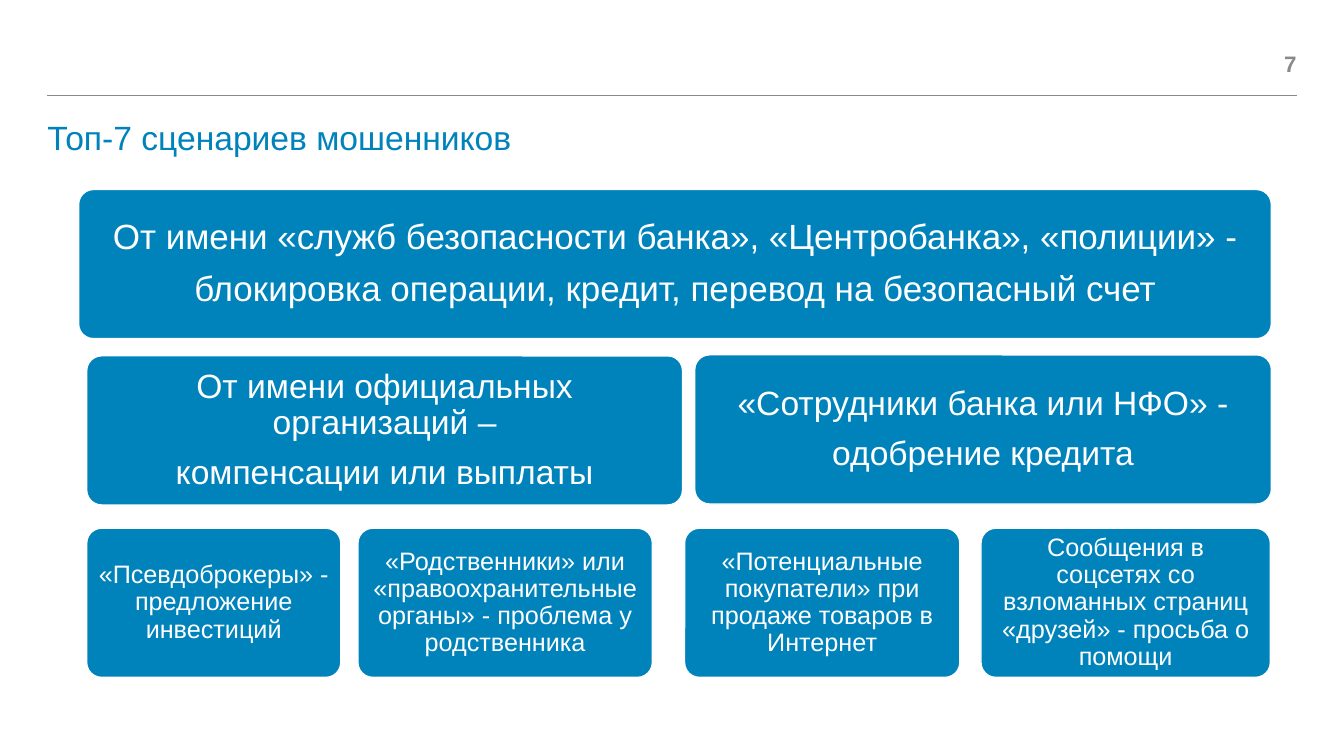
import pptx
import pptx.util
import pptx.dml.color
import pptx.enum.shapes
import pptx.enum.text
import pptx.oxml.ns
import lxml.etree

SCALE = 9144  # EMU per px, 100 px to the inch
BLUE, GREY, WHITE = "0082BB", "888A8D", "FFFFFF"
ALIGN = pptx.enum.text.PP_ALIGN
ANCHOR = pptx.enum.text.MSO_ANCHOR

# left, top, width, font size, inset, paragraphs
CARDS = [
    (78, 188, 1183, 25, 10, ["От имени «служб безопасности банка», «Центробанка», «полиции» -",
                             "блокировка операции, кредит, перевод на безопасный счет"]),
    (86, 353, 591, 24, 10, ["От имени официальных организаций –", "компенсации или выплаты"]),
    (689, 352, 572, 24, 10, ["«Сотрудники банка или НФО» -", "одобрение кредита"]),
    (86, 524, 252, 18, 7, ["«Псевдоброкеры» - предложение инвестиций"]),
    (355, 524, 292, 18, 7,
     ["«Родственники» или «правоохранительные органы» - проблема у родственника"]),
    (679, 524, 273, 18, 7, ["«Потенциальные покупатели» при продаже товаров в Интернет"]),
    (973, 524, 287, 18, 7,
     ["Сообщения в соцсетях со взломанных страниц «друзей» - просьба о помощи"]),
]
HEIGHT = 148


def px(*nums):
    return [pptx.util.Emu(n * SCALE) for n in nums]


def color(code):
    return pptx.dml.color.RGBColor.from_string(code)


def write(shape, lines, size, code, align, anchor, inset=0, bold=False):
    frame = shape.text_frame
    frame.word_wrap = True
    frame.vertical_anchor = anchor
    (frame.margin_left, frame.margin_top,
     frame.margin_right, frame.margin_bottom) = px(*[inset] * 4)
    for i, line in enumerate(lines):
        para = frame.add_paragraph() if i else frame.paragraphs[0]
        para.text = line
        para.alignment = align
        para.line_spacing = 0.9
        if i:
            para.space_before = pptx.util.Pt(10)
        para.font.name = "Arial"
        para.font.size = pptx.util.Pt(size)
        para.font.bold = bold
        para.font.color.rgb = color(code)


def header(slide, left, top, width):
    """Place the page number, the rule and the title."""
    right = left + width
    page = slide.shapes.add_textbox(*px(right - 81, top, 81, 35))
    write(page, ["7"], 16, GREY, ALIGN.RIGHT, ANCHOR.MIDDLE, bold=True)

    rule = slide.shapes.add_connector(pptx.enum.shapes.MSO_CONNECTOR.STRAIGHT,
                                      *px(left, top + 48, right, top + 48))
    rule.line.color.rgb = color(GREY)
    rule.line.width = pptx.util.Pt(0.5)
    lxml.etree.SubElement(rule._element.spPr, pptx.oxml.ns.qn("a:effectLst"))

    title = slide.shapes.add_textbox(*px(left, top + 74, width, 66))
    write(title, ["Топ-7 сценариев мошенников"], 24, BLUE, ALIGN.LEFT, ANCHOR.TOP)


def card(slide, left, top, width, size, inset, lines):
    box = slide.shapes.add_shape(pptx.enum.shapes.MSO_SHAPE.ROUNDED_RECTANGLE,
                                 *px(left, top, width, HEIGHT))
    box.adjustments[0] = 0.1
    box.shadow.inherit = False
    box.fill.solid()
    box.fill.fore_color.rgb = color(BLUE)
    box.line.color.rgb = color(WHITE)
    box.line.width = pptx.util.Pt(1)
    write(box, lines, size, WHITE, ALIGN.CENTER, ANCHOR.MIDDLE, inset)


def main():
    deck = pptx.Presentation()
    deck.slide_width, deck.slide_height = px(1333, 750)
    slide = deck.slides.add_slide(deck.slide_layouts[6])
    header(slide, 47, 47, 1239)
    for item in CARDS:
        card(slide, *item)
    deck.save("out.pptx")


if __name__ == "__main__":
    main()
